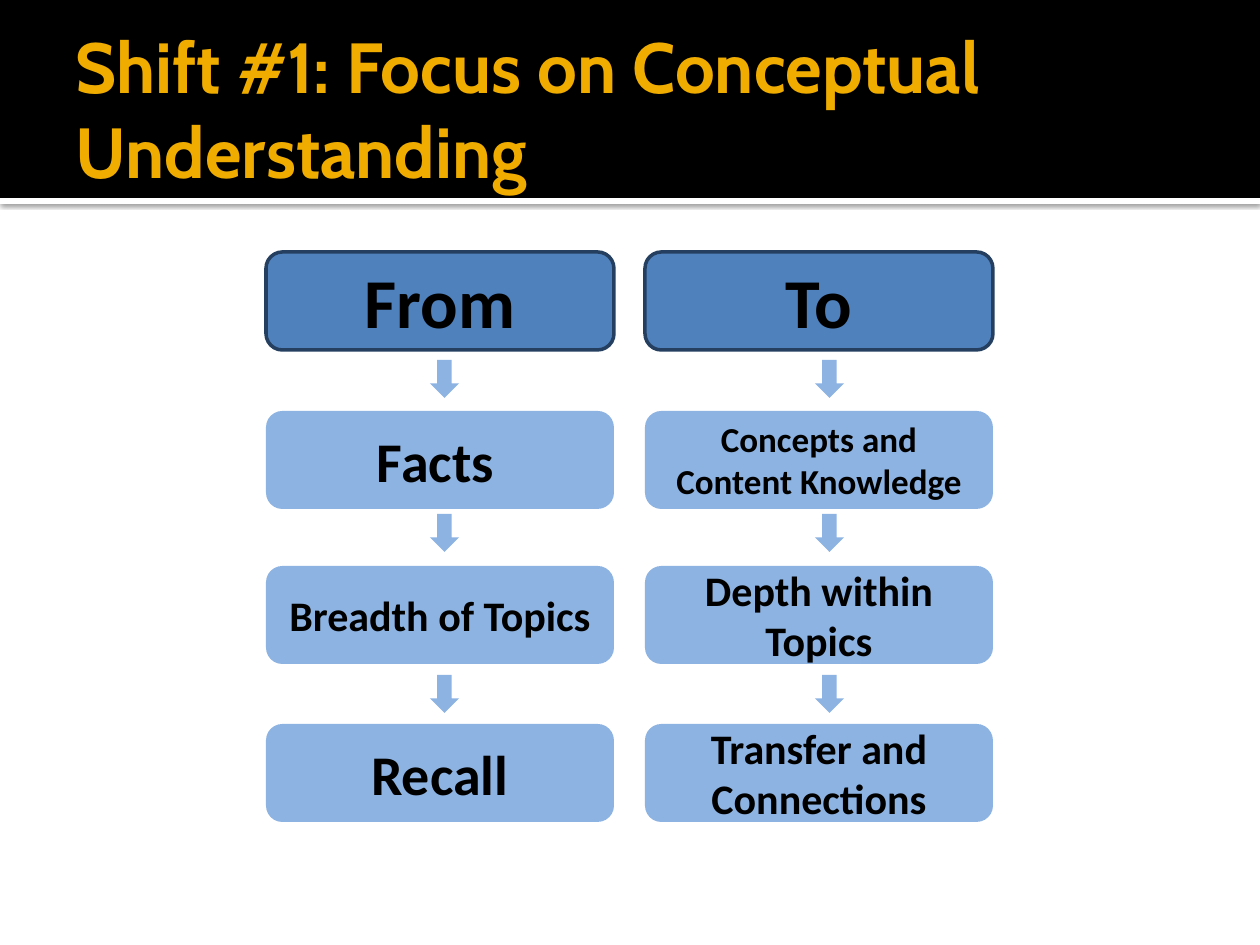
from dataclasses import dataclass

from lxml.etree import SubElement
from pptx import Presentation
from pptx.dml.color import RGBColor as RGB
from pptx.enum.shapes import MSO_SHAPE as SHAPE
from pptx.enum.text import MSO_ANCHOR as ANCHOR, MSO_AUTO_SIZE as AUTO, PP_ALIGN as ALIGN
from pptx.oxml.ns import qn
from pptx.util import Pt

PX = 914400 / 126


@dataclass(frozen=True)
class Theme:
    black: RGB = RGB(0, 0, 0)
    white: RGB = RGB(255, 255, 255)
    gold: RGB = RGB.from_string("F0AD00")
    header: RGB = RGB.from_string("4F81BD")
    header_line: RGB = RGB.from_string("243F60")
    step: RGB = RGB.from_string("8DB3E2")
    title_font: str = "Cabin"
    body_font: str = "Calibri"
    title_size: float = 40.5
    header_size: int = 40
    large: int = 32
    medium: int = 24
    small: int = 20


THEME = Theme()
CARD_W, CARD_H = 348, 98
ARROW_W, ARROW_H = 29, 38
ROW_TOPS = (252, 411, 566, 724)
ARROW_TOPS = (360, 514, 675)
# Card left, arrow left, then (text, size) from the header down
COLUMNS = (
    (266, 430, (("From", THEME.header_size), ("Facts\t", THEME.large),
                ("Breadth of Topics", THEME.medium), ("Recall", THEME.large))),
    (645, 815, (("To", THEME.header_size), ("Concepts and Content Knowledge", THEME.small),
                ("Depth within Topics", THEME.medium), ("Transfer and Connections", THEME.medium))),
)


def px(n):
    return round(n * PX)


def style_text(p, font, size, color):
    for r in p.runs:
        r.font.name, r.font.size, r.font.bold = font, Pt(size), True
        r.font.color.rgb = color


def add_shape(s, kind, x, y, w, h, fill):
    sp = s.shapes.add_shape(kind, px(x), px(y), px(w), px(h))
    sp.shadow.inherit = False
    sp.fill.solid()
    sp.fill.fore_color.rgb = fill
    sp.line.fill.background()
    return sp


def add_drop_shadow(sp):
    effects = sp._element.spPr.find(qn("a:effectLst"))
    shadow = SubElement(effects, qn("a:outerShdw"), blurRad=str(Pt(2.5)),
                        dist=str(Pt(0.8)), dir="5400000", algn="t", rotWithShape="0")
    color = SubElement(shadow, qn("a:srgbClr"), val=str(THEME.black))
    SubElement(color, qn("a:alpha"), val="60000")


def add_banner(s):
    rule = add_shape(s, SHAPE.RECTANGLE, 0, 198, 1260, 6, THEME.white)
    add_drop_shadow(rule)
    add_shape(s, SHAPE.RECTANGLE, 0, 0, 1260, 198, THEME.black)


def add_card(s, x, y, text, size, is_header):
    sp = add_shape(s, SHAPE.ROUNDED_RECTANGLE, x, y, CARD_W, CARD_H,
                   THEME.header if is_header else THEME.step)
    if is_header:
        sp.line.color.rgb = THEME.header_line
        sp.line.width = Pt(2)
    tf = sp.text_frame
    tf.text = text
    tf.word_wrap = True
    tf.vertical_anchor = ANCHOR.MIDDLE
    p = tf.paragraphs[0]
    p.alignment = ALIGN.CENTER
    p.space_before = p.space_after = Pt(5)
    style_text(p, THEME.body_font, size, THEME.black)


def add_column(s, card_x, arrow_x, cards):
    for i, (y, (text, size)) in enumerate(zip(ROW_TOPS, cards)):
        add_card(s, card_x, y, text, size, is_header=i == 0)
    for y in ARROW_TOPS:
        add_shape(s, SHAPE.DOWN_ARROW, arrow_x, y, ARROW_W, ARROW_H, THEME.step)


def set_title(s, text):
    """Fill the title placeholder and bring it in front of the banner."""
    title = s.shapes.title
    title.left, title.top, title.width, title.height = map(px, (63, 21, 1134, 173))
    tf = title.text_frame
    tf.text = text
    tf.word_wrap = True
    tf.auto_size = AUTO.NONE
    tf.vertical_anchor = ANCHOR.MIDDLE
    tf.margin_left = px(13)
    tf.margin_right = tf.margin_top = tf.margin_bottom = px(6)
    p = tf.paragraphs[0]
    p.alignment = ALIGN.LEFT
    style_text(p, THEME.title_font, THEME.title_size, THEME.gold)
    s.shapes._spTree.append(title._element)


def main():
    prs = Presentation()
    prs.slide_width, prs.slide_height = px(1260), px(945)
    s = prs.slides.add_slide(prs.slide_layouts[5])
    add_banner(s)
    for column in COLUMNS:
        add_column(s, *column)
    set_title(s, "Shift #1: Focus on Conceptual Understanding")
    prs.save("out.pptx")


if __name__ == "__main__":
    main()
